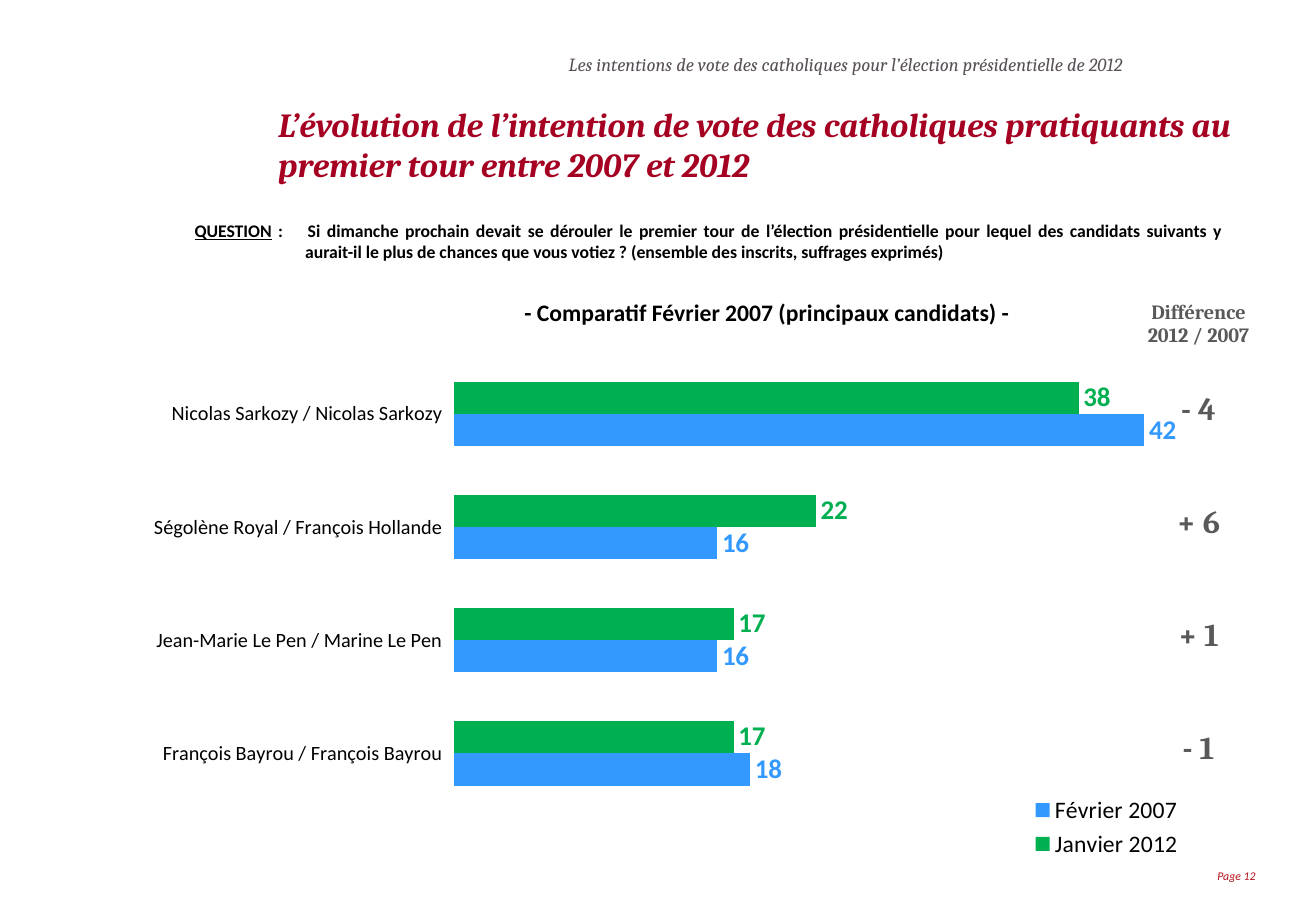
from dataclasses import dataclass

from lxml import etree
from pptx import Presentation
from pptx.chart.data import CategoryChartData
from pptx.dml.color import RGBColor
from pptx.enum.chart import XL_CHART_TYPE, XL_LABEL_POSITION, XL_LEGEND_POSITION, XL_TICK_MARK
from pptx.enum.text import MSO_ANCHOR, MSO_AUTO_SIZE, PP_ALIGN
from pptx.oxml.ns import qn
from pptx.util import Cm, Pt

CLUSTERED = XL_CHART_TYPE.BAR_CLUSTERED
OUTSIDE_END = XL_LABEL_POSITION.OUTSIDE_END
LEGEND_RIGHT = XL_LEGEND_POSITION.RIGHT
TICK_OUTSIDE = XL_TICK_MARK.OUTSIDE
TOP, MIDDLE = MSO_ANCHOR.TOP, MSO_ANCHOR.MIDDLE
NO_AUTOFIT = MSO_AUTO_SIZE.NONE
LEFT, CENTER, JUSTIFY = PP_ALIGN.LEFT, PP_ALIGN.CENTER, PP_ALIGN.JUSTIFY


def font_format(name, size, color, bold=False, italic=False):
    return {"name": name, "size": Pt(size), "bold": bold, "italic": italic,
            "color": RGBColor.from_string(color)}


@dataclass(frozen=True)
class Theme:
    january = "00B050"
    february = "3399FF"
    header = font_format("Cambria", 11, "585056", italic=True)
    title = font_format("Cambria", 20, "A50021", bold=True, italic=True)
    question = font_format("Calibri", 10.5, "000000", bold=True)
    subtitle = font_format("Calibri", 14, "000000", bold=True)
    chart = font_format("Calibri", 14, "000000")
    candidate = font_format("Calibri", 12, "000000")
    gap_heading = font_format("Cambria", 12, "595959", bold=True)
    gap_value = font_format("Cambria", 19, "595959", bold=True)
    page = font_format("Calibri", 7, "B5121B", italic=True)

    def value(self, color):
        return font_format("Calibri", 16, color, bold=True)


def apply_font(font, values):
    for key, value in values.items():
        if key == "color":
            font.color.rgb = value
        else:
            setattr(font, key, value)


def set_layout(element, x, y, w, h, inner=False):
    """Place a plot area or a legend by fractions of the chart."""
    for old in element.findall(qn("c:layout")):
        element.remove(old)
    layout = etree.Element(qn("c:layout"))
    manual = etree.SubElement(layout, qn("c:manualLayout"))
    settings = {"layoutTarget": "inner"} if inner else {}
    settings |= {"xMode": "edge", "yMode": "edge", "x": x, "y": y, "w": w, "h": h}
    for tag, value in settings.items():
        etree.SubElement(manual, qn(f"c:{tag}")).set("val", str(value))
    if inner:
        element.insert(0, layout)
    else:
        element.find(qn("c:legendPos")).addnext(layout)


class PollSlide:
    def __init__(self, presentation, theme):
        self.theme = theme
        self.slide = presentation.slides.add_slide(presentation.slide_layouts[5])
        self.shapes = self.slide.shapes

    def fill_frame(self, frame, runs, style, align, anchor, margins):
        frame.word_wrap = True
        frame.auto_size = NO_AUTOFIT
        frame.vertical_anchor = anchor
        for side, margin in zip(("left", "top", "right", "bottom"), margins):
            setattr(frame, f"margin_{side}", Cm(margin))
        paragraph = frame.paragraphs[0]
        paragraph.alignment = align
        for text in runs:
            run = paragraph.add_run()
            run.text = text
            apply_font(run.font, style)
        return paragraph

    def text(self, runs, box, style, align=LEFT, anchor=MIDDLE, margins=(0, 0, 0, 0)):
        shape = self.shapes.add_textbox(*map(Cm, box))
        return self.fill_frame(shape.text_frame, runs, style, align, anchor, margins)

    def title(self, text, box):
        title = self.shapes.title
        title.left, title.top, title.width, title.height = map(Cm, box)
        self.fill_frame(title.text_frame, [text], self.theme.title, LEFT, MIDDLE, (0, 0, 0, 0))

    def question(self, label, text, box):
        paragraph = self.text([label, f" :\t{text}"], box, self.theme.question,
                              JUSTIFY, TOP, (0.23, 0.46, 0.91, 0.46))
        properties = paragraph._p.get_or_add_pPr()
        properties.set("marL", str(Cm(2.31)))
        properties.set("indent", str(-Cm(2.31)))
        paragraph.runs[0].font.underline = True

    def gap_table(self, heading, gaps, box, heading_height, row_height):
        table = self.shapes.add_table(len(gaps) + 1, 1, *map(Cm, box)).table
        table.first_row = table.horz_banding = False
        for index, text in enumerate([heading, *gaps]):
            table.rows[index].height = Cm(row_height if index else heading_height)
            cell = table.cell(index, 0)
            cell.fill.background()
            cell.vertical_anchor = MIDDLE
            cell.text_frame.text = text
            style = self.theme.gap_value if index else self.theme.gap_heading
            for paragraph in cell.text_frame.paragraphs:
                paragraph.alignment = CENTER
                apply_font(paragraph.runs[0].font, style)

    def chart(self, candidates, polls, box):
        data = CategoryChartData()
        data.categories = candidates
        for name, scores, _ in polls:
            data.add_series(name, scores)
        chart = self.shapes.add_chart(CLUSTERED, *map(Cm, box), data).chart
        chart.has_title = False
        apply_font(chart.font, self.theme.chart)

        # Axes
        candidate_axis, score_axis = chart.category_axis, chart.value_axis
        candidate_axis.reverse_order = True
        candidate_axis.major_tick_mark = TICK_OUTSIDE
        candidate_axis.format.line.fill.background()
        apply_font(candidate_axis.tick_labels.font, self.theme.candidate)
        score_axis.minimum_scale, score_axis.maximum_scale = 0, 45
        score_axis.has_major_gridlines = False
        score_axis.visible = False

        # Bars and their values
        plot = chart.plots[0]
        plot.gap_width, plot.overlap = 150, 0
        plot.vary_by_categories = False
        for series, (_, _, color) in zip(plot.series, polls):
            series.format.fill.solid()
            series.format.fill.fore_color.rgb = RGBColor.from_string(color)
            labels = series.data_labels
            labels.show_value = True
            labels.position = OUTSIDE_END
            apply_font(labels.font, self.theme.value(color))

        # Legend and plot position
        chart.has_legend = True
        chart.legend.position = LEGEND_RIGHT
        chart.legend.include_in_layout = False
        set_layout(chart.legend._element, 0.775, 0.85, 0.15, 0.13)
        set_layout(chart._chartSpace.chart.plotArea, 0.318, 0.066, 0.603, 0.818, inner=True)


def main():
    theme = Theme()
    presentation = Presentation()
    presentation.slide_width, presentation.slide_height = Cm(27.51), Cm(19)
    page = PollSlide(presentation, theme)

    # Heading
    page.text(["Les intentions de vote des catholiques pour l’élection présidentielle de 2012"],
              (11.89, 1.04, 14.1, 0.61), theme.header)
    page.title("L’évolution de l’intention de vote des catholiques pratiquants au "
               "premier tour entre 2007 et 2012", (5.82, 1.9, 20.55, 2.21))

    # Difference between the two polls
    page.gap_table("Différence\n2012 / 2007", ["- 4", "+ 6", "+ 1", "- 1"],
                   (22.96, 6.17, 4.19, 10.74), heading_height=1.07, row_height=2.36)

    # Poll results
    page.chart(["Nicolas Sarkozy / Nicolas Sarkozy", "Ségolène Royal / François Hollande",
                "Jean-Marie Le Pen / Marine Le Pen", "François Bayrou / François Bayrou"],
               [("Janvier 2012", (38, 22, 17, 17), theme.january),
                ("Février 2007", (42, 16, 16, 18), theme.february)],
               (1.35, 6.71, 25.63, 11.56))

    # Question and subtitle
    page.question("QUESTION", "Si dimanche prochain devait se dérouler le premier tour de "
                  "l’élection présidentielle pour lequel des candidats suivants y aurait-il le "
                  "plus de chances que vous votiez ? (ensemble des inscrits, suffrages exprimés)",
                  (3.84, 4.14, 22.63, 1.83))
    page.text(["- Comparatif Février 2007 (principaux candidats) -"], (7.54, 6.1, 16.99, 0.86),
              theme.subtitle, CENTER, TOP, (0.25, 0.13, 0.25, 0.13))

    # Page number
    page.text(["Page 12"], (25.45, 18.06, 1.7, 0.48), theme.page)

    presentation.save("out.pptx")


if __name__ == "__main__":
    main()
